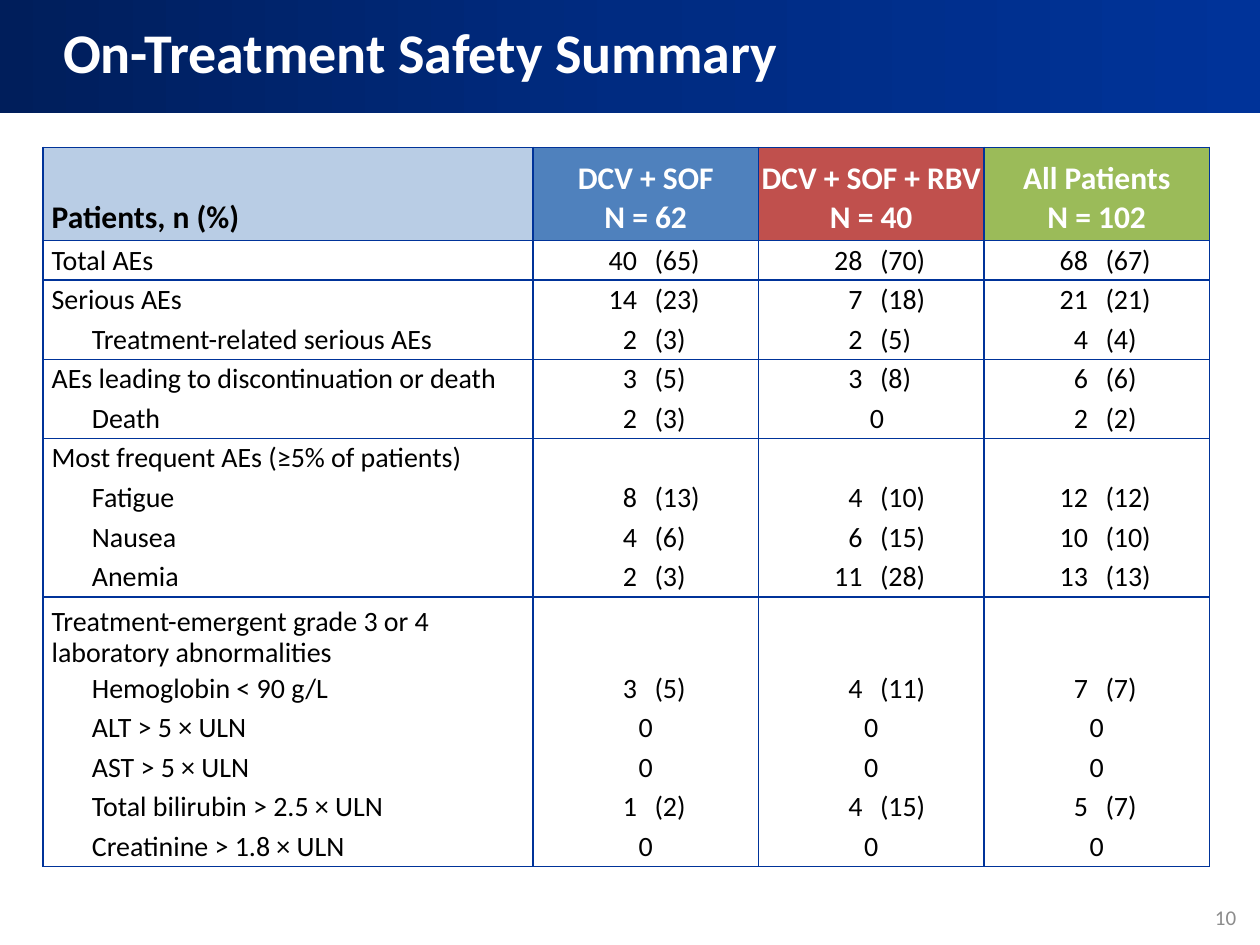
from copy import deepcopy
from dataclasses import dataclass

from lxml.etree import SubElement
from pptx import Presentation
from pptx.dml.color import RGBColor
from pptx.enum.shapes import MSO_SHAPE
from pptx.enum.text import MSO_ANCHOR, MSO_AUTO_SIZE, PP_ALIGN
from pptx.oxml.ns import qn
from pptx.util import Inches, Pt


@dataclass(frozen=True)
class Theme:
    font: str = "Calibri"
    title_size: int = 32
    header_size: int = 18
    body_size: int = 16
    number_size: int = 12
    white: str = "FFFFFF"
    black: str = "000000"
    grey: str = "8C8C8C"
    rule: str = "003399"
    band: tuple = ("001E5B", "002B81", "003399")
    headers: tuple = ("B9CDE5", "4F81BD", "C0504D", "9BBB59")


HEADERS = ["Patients, n (%)", "DCV + SOF\nN = 62", "DCV + SOF + RBV\nN = 40", "All Patients\nN = 102"]

# Each section is ruled off; its first row is flush left, the others are indented
SECTIONS = [
    [("Total AEs", "40 (65)", "28 (70)", "68 (67)")],
    [("Serious AEs", "14 (23)", "7 (18)", "21 (21)"),
     ("Treatment-related serious AEs", "2 (3)", "2 (5)", "4 (4)")],
    [("AEs leading to discontinuation or death", "3 (5)", "3 (8)", "6 (6)"),
     ("Death", "2 (3)", "0", "2 (2)")],
    [("Most frequent AEs (≥5% of patients)", "", "", ""),
     ("Fatigue", "8 (13)", "4 (10)", "12 (12)"),
     ("Nausea", "4 (6)", "6 (15)", "10 (10)"),
     ("Anemia", "2 (3)", "11 (28)", "13 (13)")],
    [("Treatment-emergent grade 3 or 4 laboratory abnormalities", "", "", ""),
     ("Hemoglobin < 90 g/L", "3 (5)", "4 (11)", "7 (7)"),
     ("ALT > 5 × ULN", "0", "0", "0"),
     ("AST > 5 × ULN", "0", "0", "0"),
     ("Total bilirubin > 2.5 × ULN", "1 (2)", "4 (15)", "5 (7)"),
     ("Creatinine > 1.8 × ULN", "0", "0", "0")],
]


class SlideBuilder:
    def __init__(self, prs, theme):
        self.theme = theme
        self.s = prs.slides.add_slide(prs.slide_layouts[5])

    def style(self, p, size, color, bold=False, align=PP_ALIGN.LEFT):
        p.alignment = align
        p.font.name, p.font.size, p.font.bold = self.theme.font, Pt(size), bold
        p.font.color.rgb = RGBColor.from_string(color)

    def title(self, text, height):
        sp = self.s.shapes.title
        sp.left, sp.top, sp.width, sp.height = 0, 0, Inches(10), height
        tf = sp.text_frame
        tf.text = text
        tf.auto_size = MSO_AUTO_SIZE.NONE
        tf.vertical_anchor = MSO_ANCHOR.MIDDLE
        tf.margin_left = Inches(0.5)
        p = tf.paragraphs[0]
        p.line_spacing = 0.85
        self.style(p, self.theme.title_size, self.theme.white, bold=True)

    def band(self, height):
        sp = self.s.shapes.add_shape(MSO_SHAPE.RECTANGLE, 0, 0, Inches(10), height)
        sp.shadow.inherit = False
        sp.line.fill.background()
        sp.fill.gradient()
        sp.fill.gradient_angle = 0
        first = next(sp.element.iter(qn("a:gs")))
        first.addnext(deepcopy(first))
        for i, (stop, color) in enumerate(zip(sp.fill.gradient_stops, self.theme.band)):
            stop.position = i / 2
            stop.color.rgb = RGBColor.from_string(color)
        # The band lies behind the title
        self.s.shapes.title.element.addprevious(sp.element)

    def page_number(self, text):
        tf = self.s.shapes.add_textbox(Inches(9.54), Inches(7.13), Inches(0.37), Inches(0.3)).text_frame
        tf.word_wrap = False
        tf.vertical_anchor = MSO_ANCHOR.MIDDLE
        tf.text = text
        self.style(tf.paragraphs[0], self.theme.number_size, self.theme.grey, align=PP_ALIGN.RIGHT)

    def table(self, left, top, col_widths, row_heights):
        frame = self.s.shapes.add_table(len(row_heights), len(col_widths), left, top,
                                        sum(col_widths), sum(row_heights))
        table = frame.table
        table.first_row = table.horz_banding = False
        for col, width in zip(table.columns, col_widths):
            col.width = width
        for row, height in zip(table.rows, row_heights):
            row.height = height
        return table

    def cell(self, cell, text, fill, edges, size, color=None, bold=False,
             align=PP_ALIGN.LEFT, anchor=MSO_ANCHOR.MIDDLE, side=0.07, bottom=0.0):
        cell.margin_left = cell.margin_right = Inches(side)
        cell.margin_top, cell.margin_bottom = 0, Inches(bottom)
        cell.vertical_anchor = anchor
        cell.text = text
        for p in cell.text_frame.paragraphs:
            self.style(p, size, color or self.theme.black, bold, align)
        cell.fill.solid()
        cell.fill.fore_color.rgb = RGBColor.from_string(fill)
        self.borders(cell, edges)
        return cell.text_frame.paragraphs[0]

    def borders(self, cell, edges):
        tcPr = cell._tc.get_or_add_tcPr()
        for i, edge in enumerate("LRTB"):
            ln = SubElement(tcPr, qn(f"a:ln{edge}"), w=str(Pt(1)))
            if edge in edges:
                fill = SubElement(ln, qn("a:solidFill"))
                SubElement(fill, qn("a:srgbClr"), val=self.theme.rule)
            else:
                SubElement(ln, qn("a:noFill"))
            tcPr.insert(i, ln)


def fill_header(b, table):
    for i, (text, fill) in enumerate(zip(HEADERS, b.theme.headers)):
        col = max(0, 2 * i - 1)
        look = dict(fill=fill, edges="LRTB", size=b.theme.header_size, bold=True,
                    anchor=MSO_ANCHOR.BOTTOM, bottom=0.03)
        if i == 0:
            p = b.cell(table.cell(0, col), text, **look)
            p.space_before = p.space_after = Pt(3)
            continue
        table.cell(0, col).merge(table.cell(0, col + 1))
        b.cell(table.cell(0, col), text, color=b.theme.white, align=PP_ALIGN.CENTER,
               side=0 if "RBV" in text else 0.07, **look)


def fill_section(b, table, start, section):
    for i, (label, *values) in enumerate(section):
        row = start + i
        rules = ("T" if i == 0 else "") + ("B" if i == len(section) - 1 else "")
        look = dict(fill=b.theme.white, size=b.theme.body_size)
        wraps = len(label) > 45
        p = b.cell(table.cell(row, 0), label, edges="LR" + rules,
                   anchor=MSO_ANCHOR.BOTTOM if wraps else MSO_ANCHOR.MIDDLE, **look)
        if wraps:
            p.line_spacing = 0.9
        if i:
            p._p.get_or_add_pPr().set("marL", str(Inches(0.32)))
        # Count and percentage sit in two half columns; a lone zero spans both
        for col, value in zip((1, 3, 5), values):
            count, _, percent = value.partition(" ")
            first, second = table.cell(row, col), table.cell(row, col + 1)
            if value == "0":
                first.merge(second)
                p = b.cell(first, value, edges="LR" + rules, align=PP_ALIGN.CENTER, **look)
                if label == "Death":
                    p._p.get_or_add_pPr().set("indent", str(Inches(0.09)))
            else:
                b.cell(first, count, edges="L" + rules, align=PP_ALIGN.RIGHT, **look)
                b.cell(second, percent, edges="R" + rules, **look)


def main():
    prs = Presentation()
    prs.slide_width, prs.slide_height = Inches(10), Inches(7.5)
    b = SlideBuilder(prs, Theme())

    # Title band
    band_height = Inches(0.9)
    b.title("On-Treatment Safety Summary", band_height)
    b.band(band_height)

    # Safety table, closed by an empty row
    line = Inches(4.4 / 14)
    heights = [Inches(0.57) if len(row[0]) > 45 else line for section in SECTIONS for row in section]
    table = b.table(Inches(0.34), Inches(1.17), [Inches(3.89)] + [Inches(1.79 / 2)] * 6,
                    [Inches(0.74), *heights, Inches(0.59)])
    fill_header(b, table)
    start = 1
    for section in SECTIONS:
        fill_section(b, table, start, section)
        start += len(section)
    table.cell(start, 0).merge(table.cell(start, 6))
    b.cell(table.cell(start, 0), "", b.theme.white, "T", b.theme.body_size)

    b.page_number("10")
    prs.save("out.pptx")


if __name__ == "__main__":
    main()
